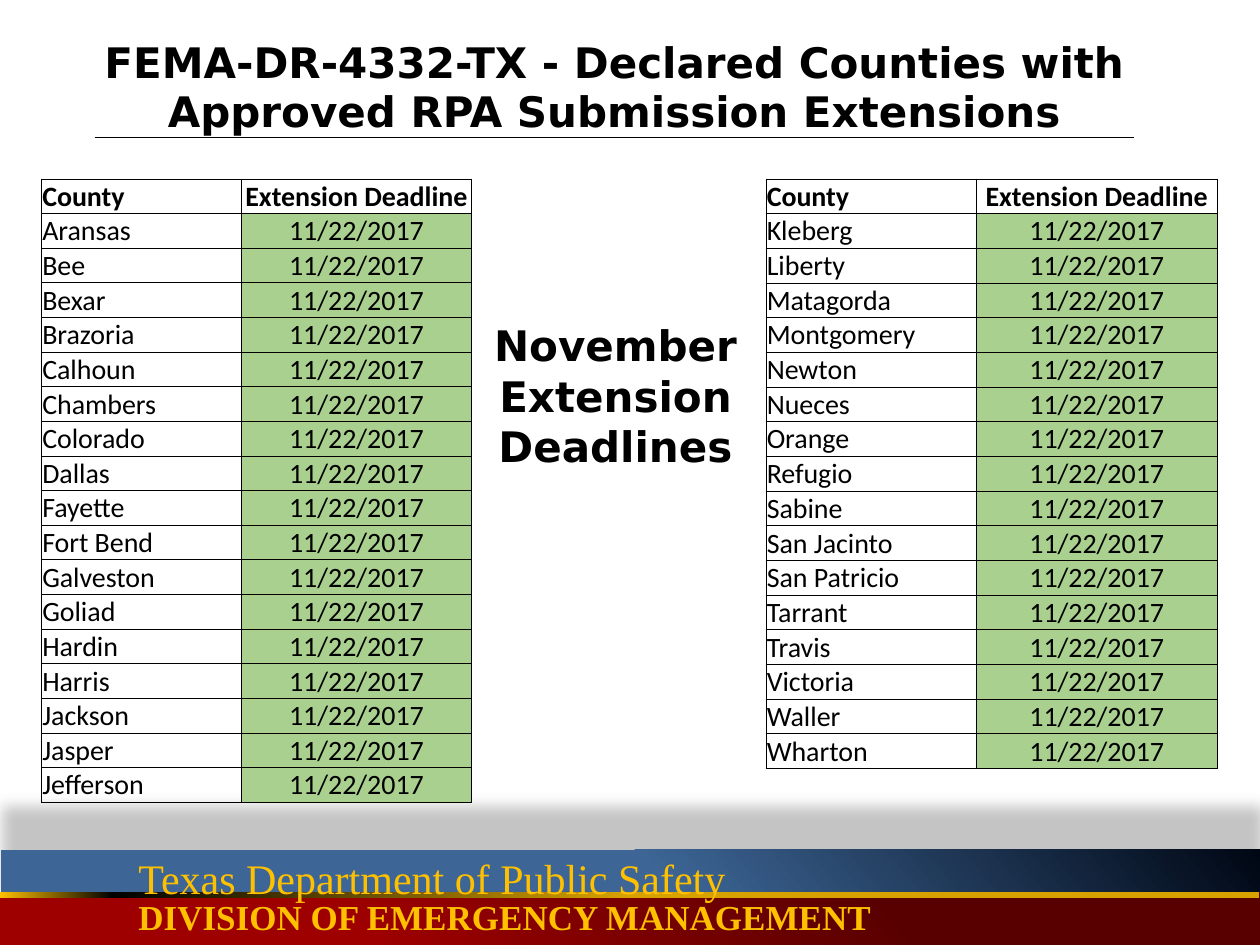
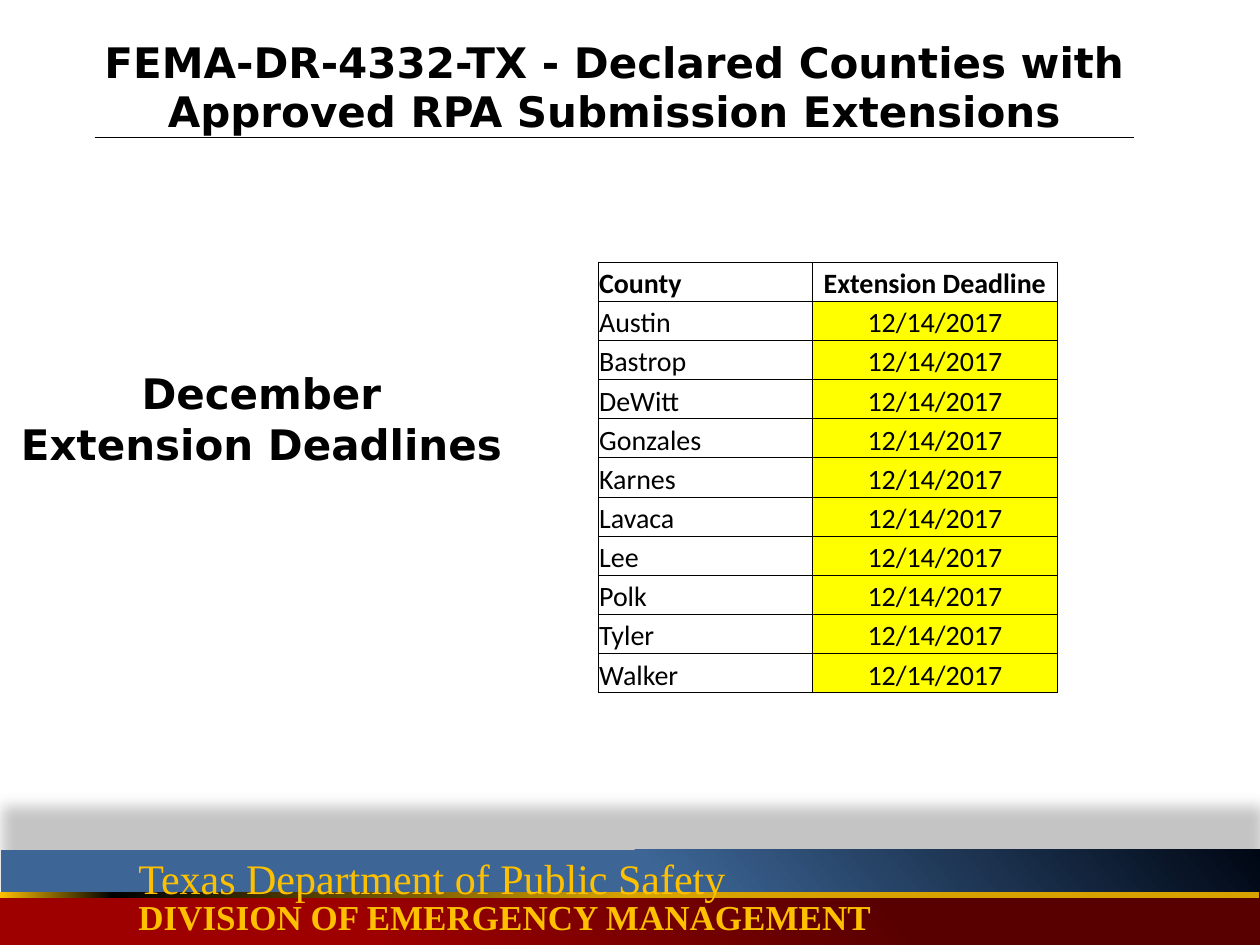
import pptx
import pptx.util
import pptx.dml.color
import pptx.enum.shapes
import pptx.enum.text
import pptx.oxml
import pptx.oxml.ns
from dataclasses import dataclass

Inches = pptx.util.Inches
Pt = pptx.util.Pt
RGB = pptx.dml.color.RGBColor.from_string
ALIGN = pptx.enum.text.PP_ALIGN
NS = pptx.oxml.ns.nsdecls("a")


@dataclass(frozen=True)
class Theme:
    ink: str = "000000"
    gold: str = "FFC000"
    november: str = "A9D08E"
    december: str = "FFFF00"
    heading_font: str = "DejaVu Sans"
    table_font: str = "Calibri"
    footer_font: str = "Times New Roman"
    heading_size: int = 24
    table_size: int = 16
    division_size: int = 20
    rule: float = 0.5
    cell_inset: float = 0.4


theme = Theme()


def write(frame, text, font=theme.heading_font, size=theme.heading_size,
          color=theme.ink, bold=True, align=ALIGN.LEFT):
    frame.text = text
    for paragraph in frame.paragraphs:
        paragraph.alignment = align
        for run in paragraph.runs:
            run.font.name = font
            run.font.size = Pt(size)
            run.font.bold = bold
            run.font.color.rgb = RGB(color)


def add_grid(slide, row_count, left, top, widths, height, ruled_sides):
    grid = slide.shapes.add_table(
        row_count, len(widths), Inches(left), Inches(top),
        Inches(sum(widths)), Inches(height)).table
    grid.first_row = False
    grid.horz_banding = False
    for column, width in zip(grid.columns, widths):
        column.width = Inches(width)
    for row in grid.rows:
        row.height = Inches(height / row_count)
    for cell in grid.iter_cells():
        cell.margin_left = cell.margin_right = cell.margin_top = Pt(theme.cell_inset)
        cell.margin_bottom = 0
        cell.vertical_anchor = pptx.enum.text.MSO_ANCHOR.BOTTOM
        for side in "LRTB":
            paint = "<a:noFill/>"
            if side in ruled_sides:
                paint = f'<a:solidFill><a:srgbClr val="{theme.ink}"/></a:solidFill>'
            cell._tc.get_or_add_tcPr().append(pptx.oxml.parse_xml(
                f'<a:ln{side} {NS} w="{Pt(theme.rule)}">{paint}</a:ln{side}>'))
        cell.fill.background()
    return grid


deck = pptx.Presentation()
deck.slide_width = Inches(10)
deck.slide_height = Inches(7.5)
layout = deck.slide_layouts[6]
for placeholder in list(layout.placeholders):
    layout.shapes.element.remove(placeholder.element)

november_slide = deck.slides.add_slide(layout)
december_slide = deck.slides.add_slide(layout)

footer_bands = [
    (4.67, 2.08, 0.67, 50, [(0, "3D6696"), (53, "3D6696"), (100, "000714")]),
    (4.79, 2.29, 0.42, 50, [(28, "9E0000"), (71, "580000")]),
    (4.97, 2.1, 0.05, 270, [(50, "D7A200"), (91, "000000"), (100, theme.gold)]),
]
footer_parts = []
for left, top, thickness, angle, stops in footer_bands:
    band = november_slide.shapes.add_shape(
        pptx.enum.shapes.MSO_SHAPE.RECTANGLE,
        Inches(left), Inches(top), Inches(thickness), Inches(10))
    band.rotation = 270
    band.line.fill.background()
    band.shadow.inherit = False
    stop_xml = "".join(
        f'<a:gs pos="{position * 1000}"><a:srgbClr val="{color}"/></a:gs>'
        for position, color in stops)
    band.element.spPr.find(pptx.oxml.ns.qn("a:prstGeom")).addnext(pptx.oxml.parse_xml(
        f'<a:gradFill {NS} rotWithShape="1"><a:gsLst>{stop_xml}</a:gsLst>'
        f'<a:lin ang="{angle * 60000}" scaled="0"/></a:gradFill>'))
    footer_parts.append(band)

footer_parts[0].element.spPr.find(pptx.oxml.ns.qn("a:effectLst")).append(
    pptx.oxml.parse_xml(
        f'<a:outerShdw {NS} blurRad="{Pt(8)}" dist="{Pt(25)}" dir="{272 * 60000}" '
        'algn="ctr" rotWithShape="0"><a:srgbClr val="808080">'
        '<a:alpha val="46000"/></a:srgbClr></a:outerShdw>'))

footer_lines = [
    ("Texas Department of Public Safety", 6.72, 6, 0.4, theme.heading_size, False),
    ("DIVISION OF EMERGENCY MANAGEMENT", 7.06, 6.83, 0.44, theme.division_size, True),
]
for text, top, width, height, size, bold in footer_lines:
    agency = november_slide.shapes.add_textbox(
        Inches(1), Inches(top), Inches(width), Inches(height))
    agency.text_frame.word_wrap = True
    write(agency.text_frame, text, font=theme.footer_font, size=size,
          color=theme.gold, bold=bold)
    footer_parts.append(agency)

for part in footer_parts:
    layout.shapes.element.append(part.element)

for slide in deck.slides:
    title = add_grid(slide, 1, 0.75, 0.17, [8.25], 0.92, "B").cell(0, 0)
    write(title.text_frame,
          "FEMA-DR-4332-TX - Declared Counties with Approved RPA Submission Extensions",
          align=ALIGN.CENTER)

month_labels = [
    (november_slide, "November\nExtension Deadlines", 3.75, 2.49, 2.27, 1.31, True),
    (december_slide, "December\nExtension Deadlines", 0.06, 2.87, 4.03, 0.91, False),
]
for slide, text, left, top, width, height, wrap in month_labels:
    month = slide.shapes.add_textbox(
        Inches(left), Inches(top), Inches(width), Inches(height))
    month.text_frame.word_wrap = wrap
    write(month.text_frame, text, align=ALIGN.CENTER)

november_first = [
    "Aransas", "Bee", "Bexar", "Brazoria", "Calhoun", "Chambers", "Colorado",
    "Dallas", "Fayette", "Fort Bend", "Galveston", "Goliad", "Hardin", "Harris",
    "Jackson", "Jasper", "Jefferson",
]
november_second = [
    "Kleberg", "Liberty", "Matagorda", "Montgomery", "Newton", "Nueces", "Orange",
    "Refugio", "Sabine", "San Jacinto", "San Patricio", "Tarrant", "Travis",
    "Victoria", "Waller", "Wharton",
]
december_counties = [
    "Austin", "Bastrop", "DeWitt", "Gonzales", "Karnes", "Lavaca", "Lee", "Polk",
    "Tyler", "Walker",
]
county_lists = [
    (november_slide, november_first, "11/22/2017", theme.november,
     0.33, 1.42, (1.59, 1.82), 4.95),
    (november_slide, november_second, "11/22/2017", theme.november,
     6.08, 1.42, (1.67, 1.91), 4.68),
    (december_slide, december_counties, "12/14/2017", theme.december,
     4.75, 2.08, (1.7, 1.94), 3.42),
]
for slide, counties, deadline, deadline_fill, left, top, widths, height in county_lists:
    rows = [("County", "Extension Deadline")] + [(county, deadline) for county in counties]
    schedule = add_grid(slide, len(rows), left, top, widths, height, "LRTB")
    for row_index, row in enumerate(rows):
        for column_index, text in enumerate(row):
            cell = schedule.cell(row_index, column_index)
            write(cell.text_frame, text, font=theme.table_font, size=theme.table_size,
                  bold=row_index == 0, align=ALIGN.CENTER if column_index else ALIGN.LEFT)
            if row_index and column_index:
                cell.fill.solid()
                cell.fill.fore_color.rgb = RGB(deadline_fill)

deck.save("out.pptx")
